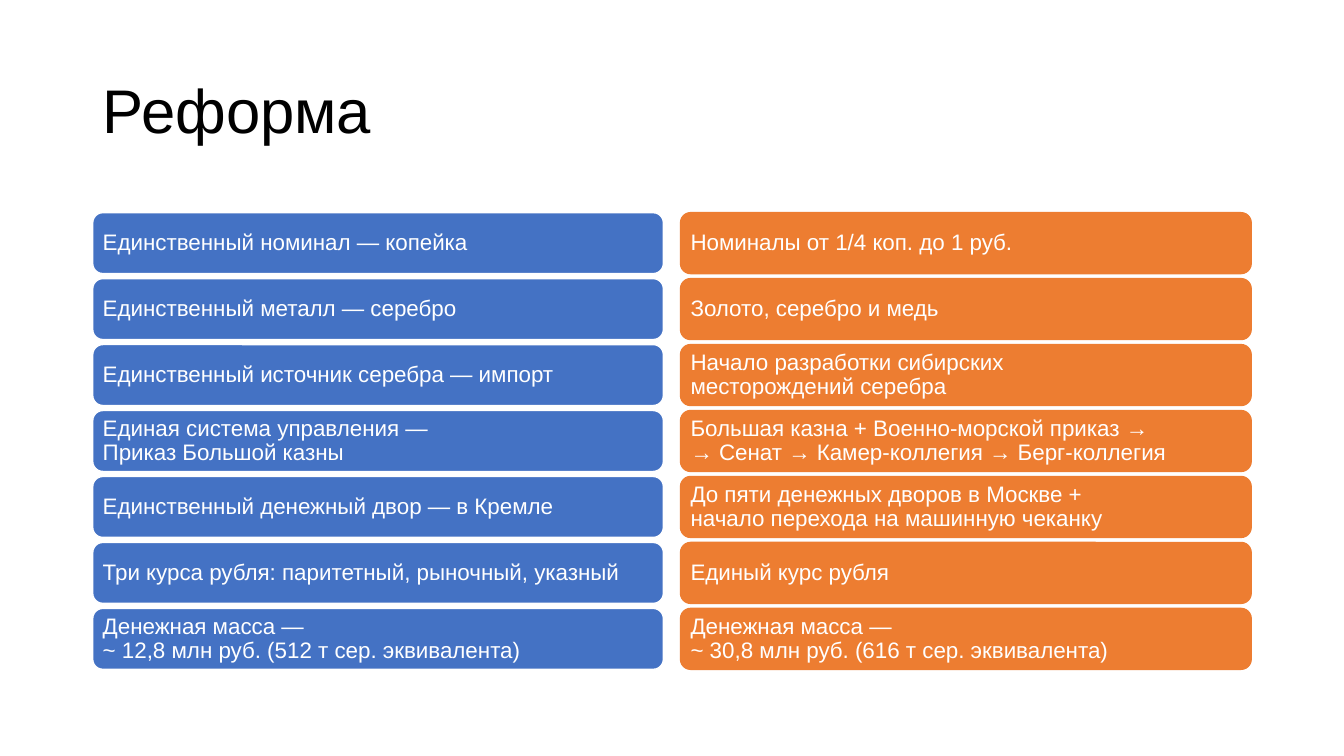
import pptx
import pptx.util
import pptx.dml.color
import pptx.enum.shapes
import pptx.enum.text

Inches, Pt = pptx.util.Inches, pptx.util.Pt
RGBColor = pptx.dml.color.RGBColor
MIDDLE = pptx.enum.text.MSO_ANCHOR.MIDDLE
LEFT = pptx.enum.text.PP_ALIGN.LEFT

BLACK = RGBColor(0x00, 0x00, 0x00)
WHITE = RGBColor(0xFF, 0xFF, 0xFF)
BLUE = RGBColor(0x44, 0x72, 0xC4)
ORANGE = RGBColor(0xED, 0x7D, 0x31)

SLIDE_W, SLIDE_H = 13.33, 7.5
MARGIN, GUTTER = 0.92, 0.17
CONTENT_W = SLIDE_W - 2 * MARGIN
COLUMN_W = (CONTENT_W - GUTTER) / 2
COLUMN_TOP, COLUMN_H, ROW_GAP = 2.11, 4.53, 0.05

BEFORE = [
    "Единственный номинал — копейка",
    "Единственный металл — серебро",
    "Единственный источник серебра — импорт",
    "Единая система управления —\nПриказ Большой казны",
    "Единственный денежный двор — в Кремле",
    "Три курса рубля: паритетный, рыночный, указный",
    "Денежная масса —\n~ 12,8 млн руб. (512 т сер. эквивалента)",
]
AFTER = [
    "Номиналы от 1/4 коп. до 1 руб.",
    "Золото, серебро и медь",
    "Начало разработки сибирских\nместорождений серебра",
    "Большая казна + Военно-морской приказ →\n→ Сенат → Камер-коллегия → Берг-коллегия",
    "До пяти денежных дворов в Москве +\nначало перехода на машинную чеканку",
    "Единый курс рубля",
    "Денежная масса —\n~ 30,8 млн руб. (616 т сер. эквивалента)",
]


def write(tf, text, size, color):
    """Fill a text frame with one left-aligned paragraph, run by run."""
    tf.word_wrap = True
    tf.vertical_anchor = MIDDLE
    p = tf.paragraphs[0]
    p.alignment = LEFT
    p.line_spacing = 0.9
    for i, line in enumerate(text.split("\n")):
        if i:
            p.add_line_break()
        r = p.add_run()
        r.text = line
        r.font.name = "Arial"
        r.font.size = Pt(size)
        r.font.color.rgb = color


def add_title(s, text, x, y, w, h):
    """Place the title placeholder in the given box."""
    sp = s.shapes.title
    sp.left, sp.top, sp.width, sp.height = map(Inches, (x, y, w, h))
    write(sp.text_frame, text, 44, BLACK)


def add_column(s, items, fill, line, x, y, w, h):
    """Stack equal rounded bars to fill the given box."""
    pitch = (h + ROW_GAP) / len(items)
    for i, text in enumerate(items):
        sp = s.shapes.add_shape(
            pptx.enum.shapes.MSO_SHAPE.ROUNDED_RECTANGLE,
            Inches(x), Inches(y + i * pitch), Inches(w), Inches(pitch - ROW_GAP))
        sp.shadow.inherit = False
        sp.fill.solid()
        sp.fill.fore_color.rgb = fill
        sp.line.color.rgb = line
        sp.line.width = Pt(1)
        tf = sp.text_frame
        tf.margin_left = tf.margin_right = Inches(0.07)
        tf.margin_top = tf.margin_bottom = Inches(0.07)
        write(tf, text, 16, WHITE)


def main():
    """Build the slide comparing money before and after the reform."""
    prs = pptx.Presentation()
    prs.slide_width, prs.slide_height = Inches(SLIDE_W), Inches(SLIDE_H)
    s = prs.slides.add_slide(prs.slide_layouts[5])
    add_title(s, "Реформа", MARGIN, 0.4, CONTENT_W, 1.45)
    columns = [(BEFORE, BLUE, WHITE), (AFTER, ORANGE, ORANGE)]
    for i, (items, fill, line) in enumerate(columns):
        x = MARGIN + i * (COLUMN_W + GUTTER)
        add_column(s, items, fill, line, x, COLUMN_TOP, COLUMN_W, COLUMN_H)
    prs.save("out.pptx")


if __name__ == "__main__":
    main()
